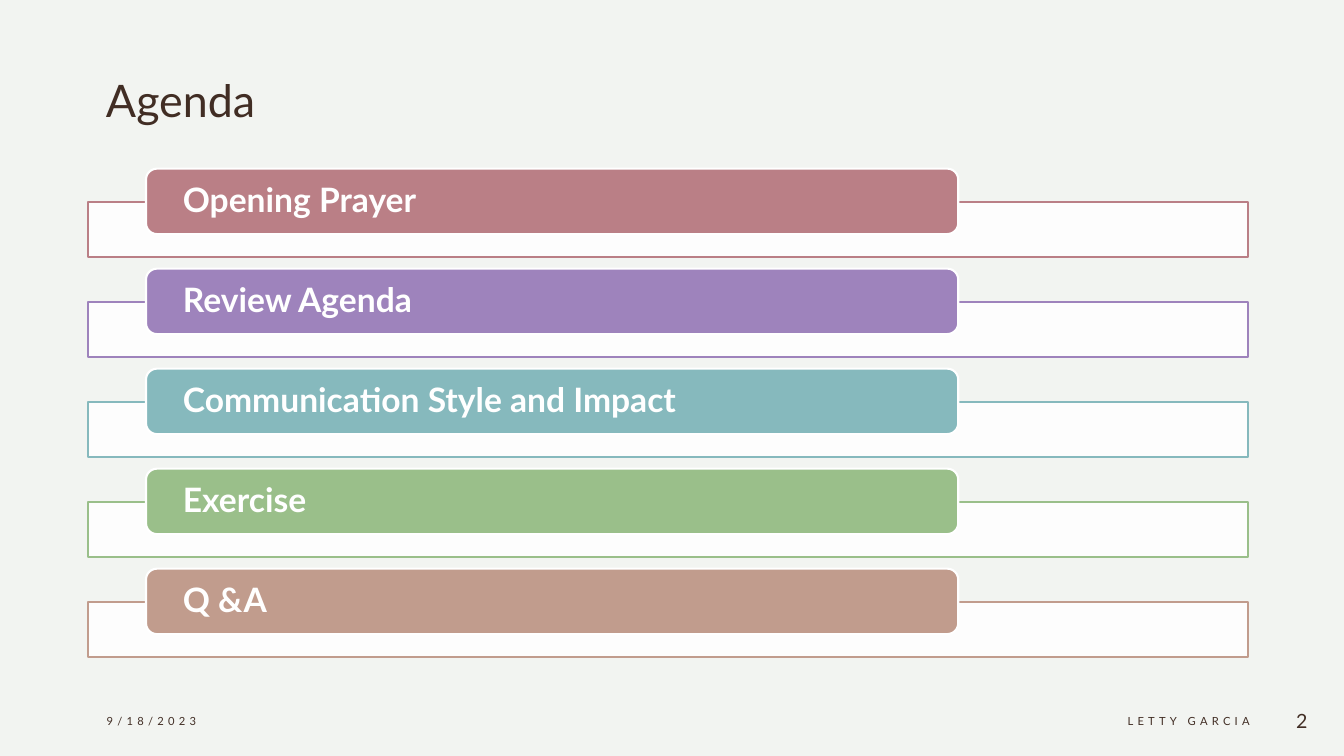
from dataclasses import dataclass

from lxml import etree
from pptx import Presentation
from pptx import util as u
from pptx.dml.color import RGBColor
from pptx.enum import shapes, text
from pptx.oxml.ns import qn

COLORS = {
    "background": "F2F4F1",
    "ink": "412D24",
    "white": "FFFFFF",
    "rose": "BA7F86",
    "violet": "9E83BC",
    "teal": "86B9BD",
    "green": "9ABF8A",
    "tan": "C19C8D",
}
FONT = "Lato"
FIRST_BAND_TOP = 5.08
ROW_PITCH = 2.52
LABEL_RISE = 0.83


@dataclass
class AgendaItem:
    label: str
    color: str


@dataclass
class FooterItem:
    content: str
    left: float
    width: float
    size: float = 8
    spacing: float = 3
    align: text.PP_ALIGN = text.PP_ALIGN.RIGHT


AGENDA = [
    AgendaItem("Opening Prayer", "rose"),
    AgendaItem("Review Agenda", "violet"),
    AgendaItem("Communication Style and Impact", "teal"),
    AgendaItem("Exercise", "green"),
    AgendaItem("Q &A", "tan"),
]
FOOTER = [
    FooterItem("9/18/2023", 2.44, 7.62, align=text.PP_ALIGN.LEFT),
    FooterItem("LETTY GARCIA", 19.81, 11.94),
    FooterItem("2", 31.75, 1.45, size=14, spacing=0),
]


def rgb(name: str) -> RGBColor:
    return RGBColor.from_string(COLORS[name])


def write(shape, content: str, *, size: float, color: str = "ink", bold: bool = False,
          align=text.PP_ALIGN.LEFT, spacing: float = 0, inset: float = 0.25,
          line_spacing: float = 1.0) -> None:
    """Fill a shape with one vertically centred paragraph; spacing is in points."""
    frame = shape.text_frame
    frame.word_wrap = True
    frame.auto_size = text.MSO_AUTO_SIZE.NONE
    frame.vertical_anchor = text.MSO_ANCHOR.MIDDLE
    frame.margin_left = frame.margin_right = u.Cm(inset)
    para = frame.paragraphs[0]
    para.alignment = align
    para.line_spacing = line_spacing
    span = para.add_run()
    span.text = content
    span.font.name = FONT
    span.font.size = u.Pt(size)
    span.font.bold = bold
    span.font.color.rgb = rgb(color)
    if spacing:
        span._r.get_or_add_rPr().set("spc", str(int(spacing * 100)))


def add_box(slide, kind, left: float, top: float, width: float, height: float, *,
            fill: str, line: str, opacity: int = 100):
    box = slide.shapes.add_shape(kind, u.Cm(left), u.Cm(top), u.Cm(width), u.Cm(height))
    box.shadow.inherit = False
    box.fill.solid()
    box.fill.fore_color.rgb = rgb(fill)
    box.line.color.rgb = rgb(line)
    box.line.width = u.Pt(1.5)
    if opacity < 100:
        color = box._element.spPr.find(qn("a:solidFill")).find(qn("a:srgbClr"))
        etree.SubElement(color, qn("a:alpha")).set("val", str(opacity * 1000))
    return box


def add_title(slide, content: str) -> None:
    title = slide.shapes.title
    title.left, title.top = u.Cm(2.42), u.Cm(1.63)
    title.width, title.height = u.Cm(29.03), u.Cm(1.75)
    write(title, content, size=32)


def add_agenda_row(slide, item: AgendaItem, top: float) -> None:
    add_box(slide, shapes.MSO_SHAPE.RECTANGLE, 2.21, top, 29.24, 1.4,
            fill="white", line=item.color, opacity=90)
    label = add_box(slide, shapes.MSO_SHAPE.ROUNDED_RECTANGLE, 3.68, top - LABEL_RISE,
                    20.47, 1.65, fill=item.color, line="white")
    write(label, item.label, size=24, color="white", bold=True, inset=0.85,
          line_spacing=0.9)


def add_footer(slide, item: FooterItem) -> None:
    box = slide.shapes.add_textbox(u.Cm(item.left), u.Cm(17.65), u.Cm(item.width), u.Cm(1.02))
    write(box, item.content, size=item.size, align=item.align, spacing=item.spacing)


def main() -> None:
    deck = Presentation()
    deck.slide_width, deck.slide_height = u.Cm(33.87), u.Cm(19.05)
    page = deck.slides.add_slide(deck.slide_layouts.get_by_name("Title Only"))
    page.background.fill.solid()
    page.background.fill.fore_color.rgb = rgb("background")
    add_title(page, "Agenda")
    for row, item in enumerate(AGENDA):
        add_agenda_row(page, item, FIRST_BAND_TOP + row * ROW_PITCH)
    for item in FOOTER:
        add_footer(page, item)
    deck.save("out.pptx")


if __name__ == "__main__":
    main()
